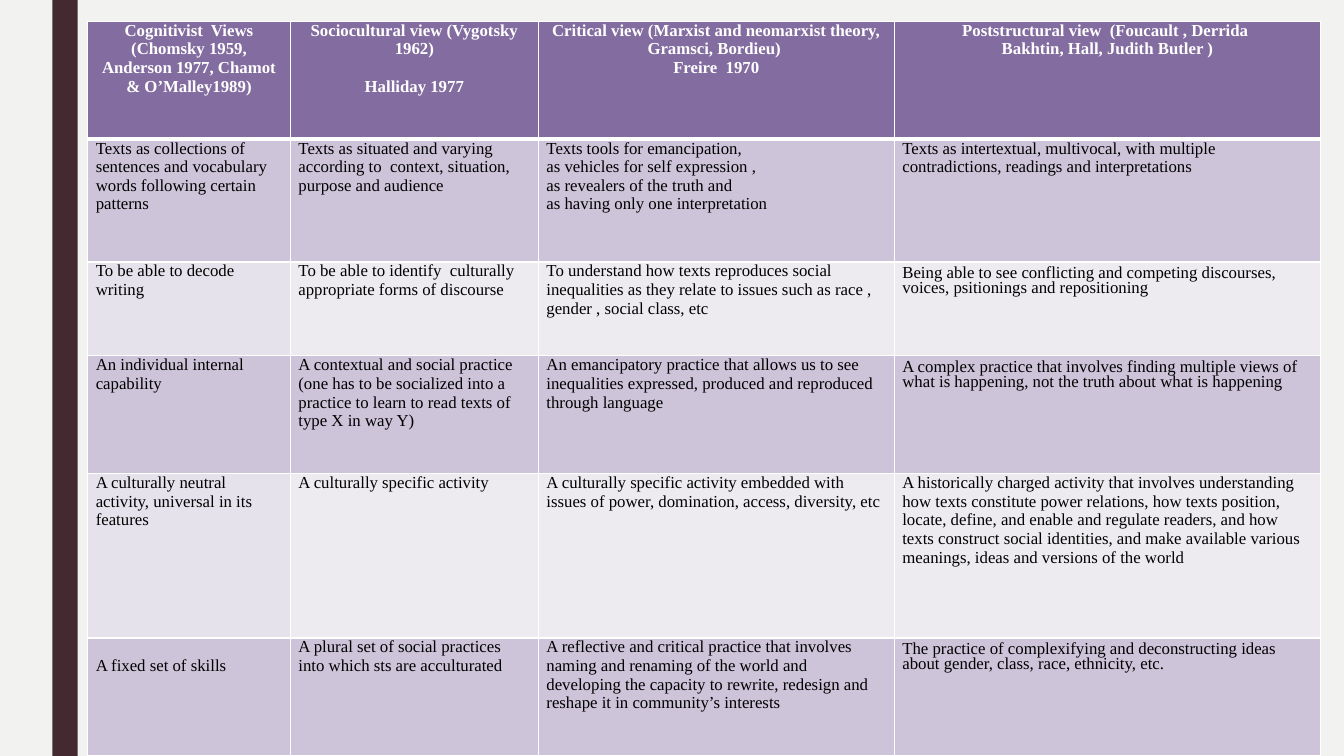
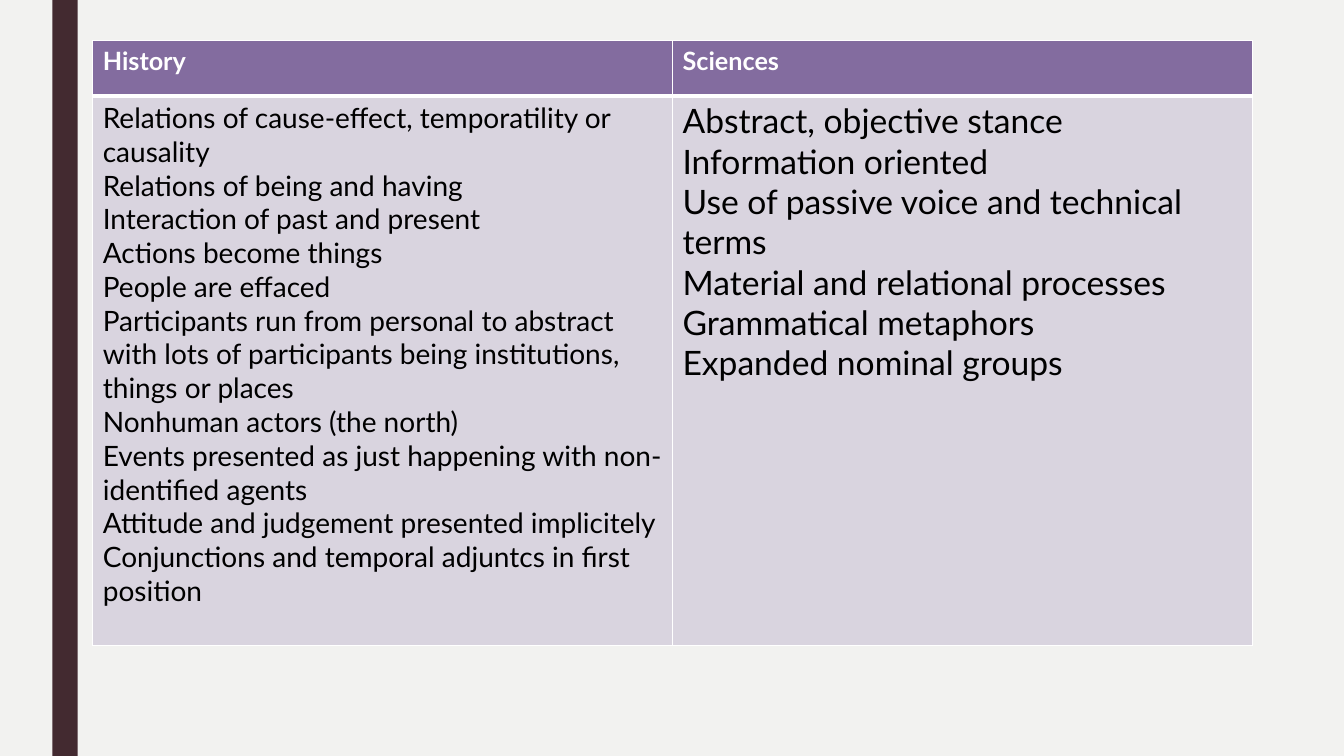
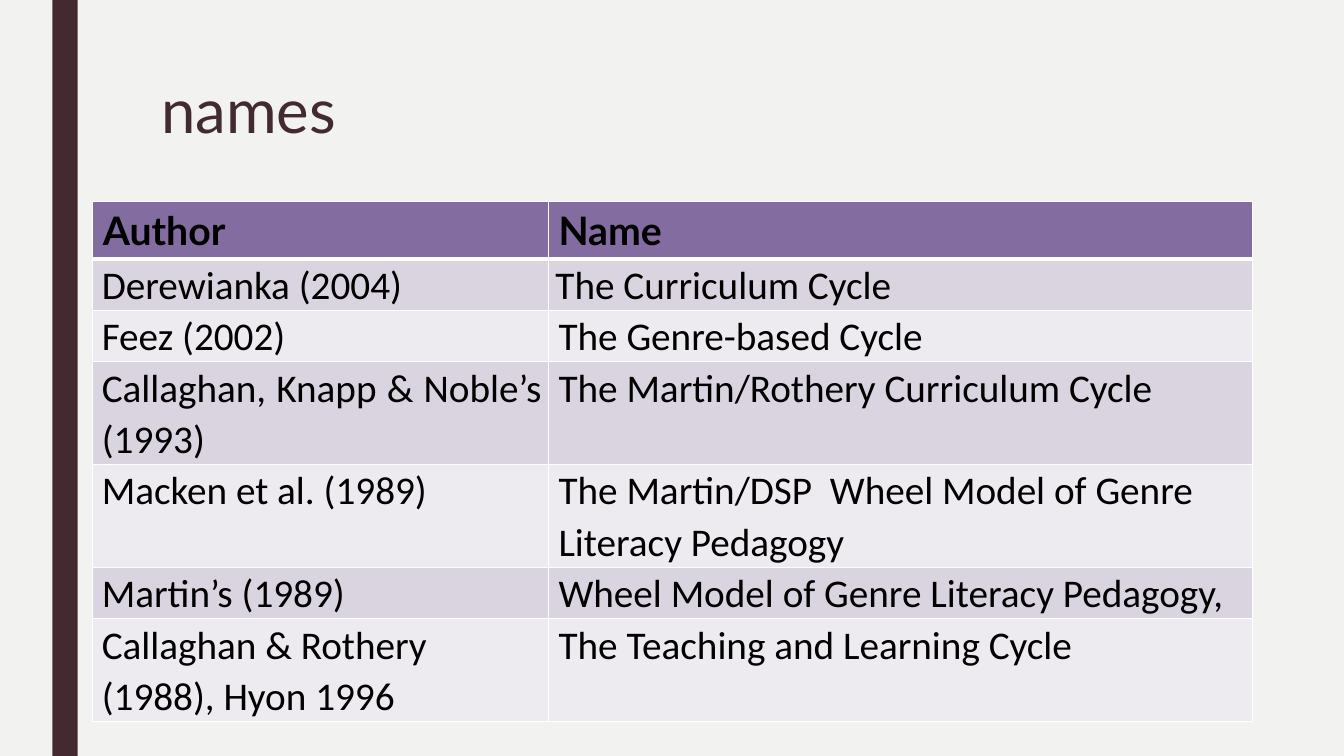
from lxml import etree
from pptx import Presentation
from pptx.dml.color import RGBColor
from pptx.enum.shapes import MSO_SHAPE
from pptx.enum.text import PP_ALIGN
from pptx.oxml.ns import qn
from pptx.util import Inches, Pt

RECT = MSO_SHAPE.RECTANGLE
CENTER, JUSTIFY = PP_ALIGN.CENTER, PP_ALIGN.JUSTIFY

PAPER = RGBColor(0xF2, 0xF2, 0xF0)
MAROON = RGBColor(0x43, 0x2A, 0x30)
WHITE = RGBColor(0xFF, 0xFF, 0xFF)
BLACK = RGBColor(0x00, 0x00, 0x00)
PURPLE = RGBColor(0x83, 0x6C, 0x9F)
LILAC = RGBColor(0xCD, 0xC4, 0xD9)
PALE_LILAC = RGBColor(0xE6, 0xE2, 0xEC)
GREY_LILAC = RGBColor(0xD9, 0xD4, 0xDF)
MIST = RGBColor(0xED, 0xEB, 0xF0)

SERIF, SANS, BODY_SANS = "Times New Roman", "Lato", "Calibri"


def format_text(tf, size, font, color, bold=False):
    for p in tf.paragraphs:
        for r in p.runs:
            r.font.size = Pt(size)
            r.font.name = font
            r.font.bold = bold
            r.font.color.rgb = color


def add_grid(slide, left, top, col_widths, row_heights, texts, bands):
    """Add a table with a purple header, alternating row fills and white rules."""
    frame = slide.shapes.add_table(
        len(row_heights), len(col_widths), Inches(left), Inches(top),
        Inches(sum(col_widths)), Inches(sum(row_heights)))
    table = frame.table
    for column, width in zip(table.columns, col_widths):
        column.width = Inches(width)
    for row, height in zip(table.rows, row_heights):
        row.height = Inches(height)
    for i, row_texts in enumerate(texts):
        for j, text in enumerate(row_texts):
            cell = table.cell(i, j)
            cell.text_frame.text = text
            cell.fill.solid()
            cell.fill.fore_color.rgb = PURPLE if i == 0 else bands[(i - 1) % 2]
            tc_pr = cell._tc.get_or_add_tcPr()
            widths = {"a:lnL": 1, "a:lnR": 1,
                      "a:lnT": 3 if i == 1 else 1, "a:lnB": 3 if i == 0 else 1}
            for k, (tag, width) in enumerate(widths.items()):
                ln = etree.Element(qn(tag), w=str(Pt(width)))
                fill = etree.SubElement(ln, qn("a:solidFill"))
                etree.SubElement(fill, qn("a:srgbClr"), val=str(WHITE))
                tc_pr.insert(k, ln)
    return table


prs = Presentation()
prs.slide_width, prs.slide_height = Inches(13.33), Inches(7.5)
prs.slide_master.background.fill.solid()
prs.slide_master.background.fill.fore_color.rgb = PAPER

slides = []
for _ in range(3):
    s = prs.slides.add_slide(prs.slide_layouts[6])
    band = s.shapes.add_shape(RECT, Inches(0.52), 0, Inches(0.25), prs.slide_height)
    band.shadow.inherit = False
    band.fill.solid()
    band.fill.fore_color.rgb = MAROON
    band.line.fill.background()
    slides.append(s)
views_slide, subjects_slide, names_slide = slides

# Views of texts and literacy
views = [
    ["Cognitivist  Views\n(Chomsky 1959, Anderson 1977, Chamot & O’Malley1989)",
     "Sociocultural view (Vygotsky 1962)\nHalliday 1977",
     "Critical view (Marxist and neomarxist theory, Gramsci, Bordieu) \nFreire  1970",
     "Poststructural view  (Foucault , Derrida \nBakhtin, Hall, Judith Butler )"],
    ["Texts as collections of sentences and vocabulary words following certain patterns",
     "Texts as situated and varying according to  context, situation, purpose and audience",
     "Texts tools for emancipation,\nas vehicles for self expression ,\n"
     "as revealers of the truth and\nas having only one interpretation",
     "Texts as intertextual, multivocal, with multiple contradictions, readings and "
     "interpretations"],
    ["To be able to decode writing",
     "To be able to identify  culturally appropriate forms of discourse",
     "To understand how texts reproduces social inequalities as they relate to issues "
     "such as race , gender , social class, etc",
     "Being able to see conflicting and competing discourses, voices, psitionings and "
     "repositioning"],
    ["An individual internal capability",
     "A contextual and social practice (one has to be socialized into a practice to learn "
     "to read texts of type X in way Y)",
     "An emancipatory practice that allows us to see inequalities expressed, produced and "
     "reproduced through language",
     "A complex practice that involves finding multiple views of what is happening, not "
     "the truth about what is happening"],
    ["A culturally neutral activity, universal in its features",
     "A culturally specific activity",
     "A culturally specific activity embedded with issues of power, domination, access, "
     "diversity, etc",
     "A historically charged activity that involves understanding how texts constitute "
     "power relations, how texts position, locate, define, and enable and regulate "
     "readers, and how texts construct social identities, and make available various "
     "meanings, ideas and versions of the world"],
    ["A fixed set of skills",
     "A plural set of social practices into which sts are acculturated",
     "A reflective and critical practice that involves naming and renaming of the world "
     "and developing the capacity to rewrite, redesign and reshape it in community’s "
     "interests",
     "The practice of complexifying and deconstructing ideas about gender, class, race, "
     "ethnicity, etc."],
]
table = add_grid(views_slide, 0.87, 0.21, [2.01, 2.46, 3.53, 4.23],
                 [1.17, 1.22, 0.93, 1.17, 1.63, 1.17], views, [LILAC, MIST])
for i, row in enumerate(table.rows):
    for cell in row.cells:
        cell.margin_left = cell.margin_right = Inches(0.08)
        cell.margin_top = cell.margin_bottom = 0
        format_text(cell.text_frame, 12, SERIF, WHITE if i == 0 else BLACK, i == 0)
        if i == 0:
            for p in cell.text_frame.paragraphs:
                p.alignment = CENTER
table.cell(0, 1).text_frame.paragraphs[1].space_before = Pt(13.5)
table.cell(5, 0).margin_top = Inches(0.18)
for i in (2, 4):
    table.cell(i, 0).fill.fore_color.rgb = PALE_LILAC
# Tight lines rise above their box, so a top margin keeps them clear of the rule
for i in (2, 3, 5):
    cell = table.cell(i, 3)
    cell.margin_top = Inches(0.05)
    cell.text_frame.paragraphs[0].line_spacing = 0.8

# Language of school subjects
history = [
    "Relations of cause-effect, temporatility or causality",
    "Relations of being and having",
    "Interaction of past and present",
    "Actions become things",
    "People are effaced",
    "Participants run from personal to abstract with lots of participants being "
    "institutions, things or places",
    "Nonhuman actors (the north)",
    "Events presented as just happening with non-identified agents",
    "Attitude and judgement presented implicitely",
    "Conjunctions and temporal adjuntcs in first position",
]
sciences = [
    "Abstract, objective stance",
    "Information oriented",
    "Use of passive voice and technical terms",
    "Material and relational processes",
    "Grammatical metaphors",
    "Expanded nominal groups",
]
subjects = [["History", "Sciences"], ["\n".join(history), "\n".join(sciences)]]
table = add_grid(subjects_slide, 0.92, 0.4, [5.75, 5.75], [0.55, 5.45], subjects,
                 [GREY_LILAC, MIST])
for j, body_size in enumerate([20, 24]):
    format_text(table.cell(0, j).text_frame, 18, SANS, WHITE, True)
    format_text(table.cell(1, j).text_frame, body_size, SANS, BLACK)

# Names of the teaching cycle
title = names_slide.shapes.add_textbox(Inches(1.5), Inches(0.75), Inches(10.5), Inches(1.62))
tf = title.text_frame
tf.word_wrap = True
tf.text = "names"
tf.paragraphs[0].line_spacing = 0.89
format_text(tf, 44, SANS, MAROON)

names = [
    ["Author", "Name"],
    ["Derewianka (2004)", "The Curriculum Cycle"],
    ["Feez (2002)", "The Genre-based Cycle"],
    ["Callaghan, Knapp & Noble’s (1993)", "The Martin/Rothery Curriculum Cycle "],
    ["Macken et al. (1989)", "The Martin/DSP  Wheel Model of Genre Literacy Pedagogy"],
    ["Martin’s (1989) ", "Wheel Model of Genre Literacy Pedagogy,"],
    ["Callaghan & Rothery (1988), Hyon 1996", "The Teaching and Learning Cycle"],
]
line_counts = [1, 1, 2, 2, 1, 2]
table = add_grid(names_slide, 0.92, 2, [4.52, 6.98],
                 [0.56] + [0.51 * n for n in line_counts], names, [GREY_LILAC, MIST])
for i, row in enumerate(table.rows):
    for j, cell in enumerate(row.cells):
        if i == 0:
            format_text(cell.text_frame, 28, SANS, BLACK, True)
            continue
        format_text(cell.text_frame, 28, BODY_SANS, BLACK)
        cell.margin_left = Inches([0.09, 0.1][j])
        cell.margin_right = Inches(0.07)
        cell.margin_top = cell.margin_bottom = 0
        p = cell.text_frame.paragraphs[0]
        p.line_spacing = 1.07
        if j == 0 and i < len(names) - 1:
            p.alignment = JUSTIFY
table.cell(1, 1).margin_left = Inches(0.07)

prs.save("out.pptx")
